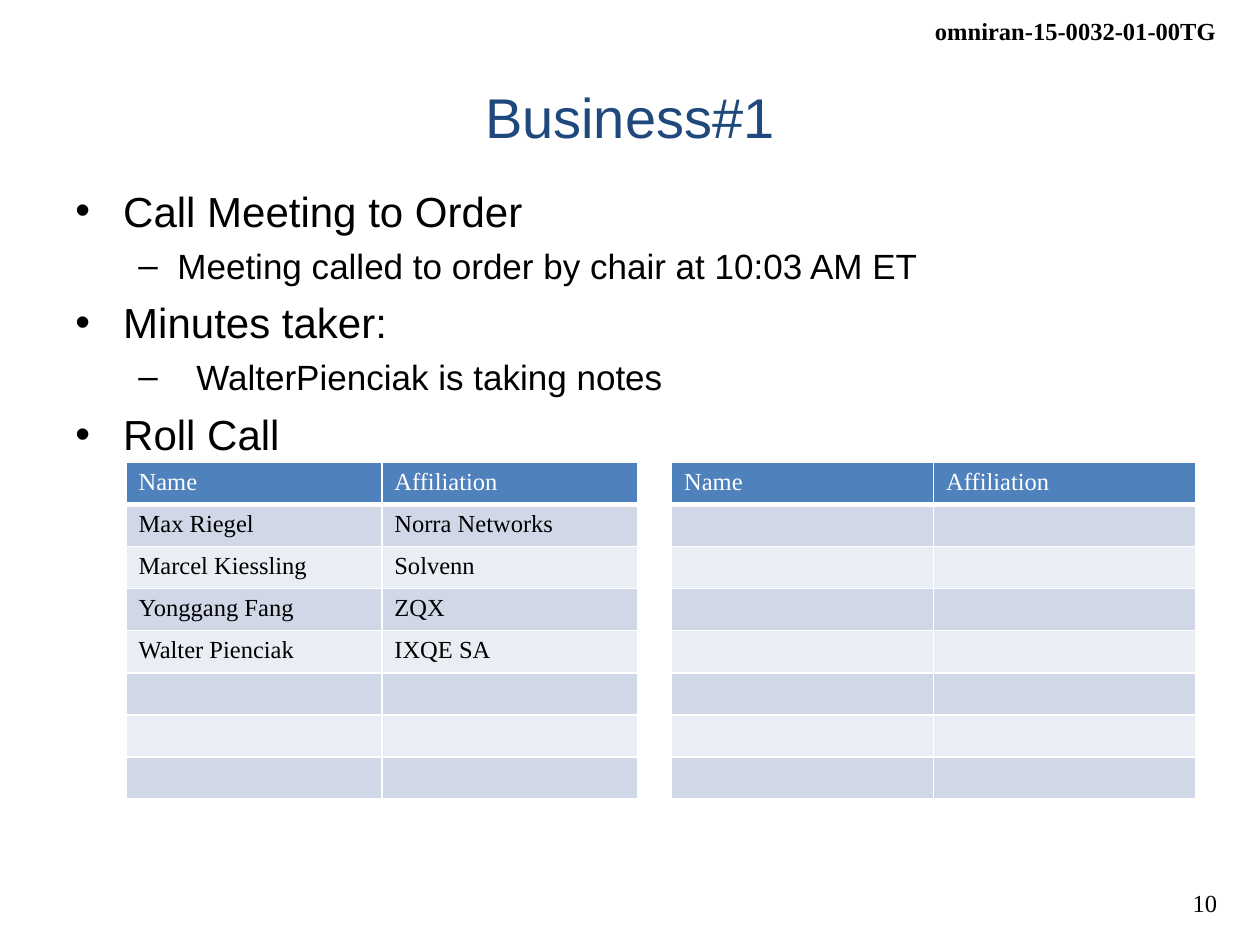
from dataclasses import dataclass

import pptx
import pptx.dml.color
import pptx.enum.text
import pptx.oxml.ns
import pptx.util
from lxml import etree

Inches = pptx.util.Inches
Pt = pptx.util.Pt
RGBColor = pptx.dml.color.RGBColor
PP_ALIGN = pptx.enum.text.PP_ALIGN
MSO_ANCHOR = pptx.enum.text.MSO_ANCHOR
qn = pptx.oxml.ns.qn

BLACK = RGBColor(0x00, 0x00, 0x00)
WHITE = RGBColor(0xFF, 0xFF, 0xFF)
NAVY = RGBColor(0x1F, 0x49, 0x7D)
HEADER = RGBColor(0x4F, 0x81, 0xBD)
BANDS = (RGBColor(0xE9, 0xED, 0xF4), RGBColor(0xD0, 0xD8, 0xE8))
SANS = "Arial"
SERIF = "Times New Roman"


@dataclass
class Style:
    size: float
    font: str
    color: RGBColor = BLACK
    bold: bool = False


@dataclass
class Label:
    text: str
    box: tuple[float, float, float, float]
    style: Style
    align: PP_ALIGN
    anchor: MSO_ANCHOR = MSO_ANCHOR.TOP
    wrap: bool = False


@dataclass
class Level:
    bullet: str
    style: Style
    left: float
    hanging: float
    before: float


LABELS = [
    Label("omniran-15-0032-01-00TG", (7.3, 0.08, 2.45, 0.34),
          Style(14, SERIF, bold=True), PP_ALIGN.RIGHT),
    Label("10", (9.33, 7, 0.43, 0.34), Style(14, SERIF), PP_ALIGN.RIGHT),
    Label("Business#1", (0.5, 0.3, 9, 1.25), Style(32, SANS, NAVY),
          PP_ALIGN.CENTER, MSO_ANCHOR.MIDDLE, True),
]

TOPIC = Level("•", Style(24, SANS), 0.38, 0.38, 6)
DETAIL = Level("–", Style(20, SANS), 0.81, 0.31, 5)
NOTE = Level("–", Style(20, SANS), 0.96, 0.46, 5)
AGENDA = [
    (TOPIC, "Call Meeting to Order"),
    (DETAIL, "Meeting called to order by chair at 10:03 AM ET"),
    (TOPIC, "Minutes taker:"),
    (NOTE, "WalterPienciak is taking notes"),
    (TOPIC, "Roll Call"),
]

COLUMNS = (2.03, 2.03, 0.27, 2.08, 2.08)
GAP_COLUMN = 2
ROW_COUNT = 8
ROW_HEIGHT = 0.32
HEADINGS = ("Name", "Affiliation", "", "Name", "Affiliation")
ATTENDEES = [
    ("Max Riegel", "Norra Networks"),
    ("Marcel Kiessling", "Solvenn"),
    ("Yonggang Fang", "ZQX"),
    ("Walter Pienciak", "IXQE SA"),
]


def add_run(p, text: str, style: Style) -> None:
    r = p.add_run()
    r.text = text
    r.font.size = Pt(style.size)
    r.font.name = style.font
    r.font.bold = style.bold
    r.font.color.rgb = style.color


def add_label(s, label: Label) -> None:
    sp = s.shapes.add_textbox(*map(Inches, label.box))
    tf = sp.text_frame
    tf.word_wrap = label.wrap
    tf.vertical_anchor = label.anchor
    p = tf.paragraphs[0]
    p.alignment = label.align
    add_run(p, label.text, label.style)


def add_agenda(s) -> None:
    sp = s.shapes.add_textbox(Inches(0.5), Inches(1.42), Inches(9), Inches(2.83))
    tf = sp.text_frame
    tf.word_wrap = True
    for i, (level, text) in enumerate(AGENDA):
        p = tf.add_paragraph() if i else tf.paragraphs[0]
        p.level = 0 if level is TOPIC else 1
        p.space_before = Pt(level.before)
        pPr = p._p.get_or_add_pPr()
        pPr.set("marL", str(Inches(level.left)))
        pPr.set("indent", str(-Inches(level.hanging)))
        etree.SubElement(pPr, qn("a:buFont"), typeface=SANS)
        etree.SubElement(pPr, qn("a:buChar"), char=level.bullet)
        add_run(p, text, level.style)


def set_borders(cell, bottom: float) -> None:
    tcPr = cell._tc.get_or_add_tcPr()
    widths = {"a:lnL": 1, "a:lnR": 1, "a:lnT": 1, "a:lnB": bottom}
    for i, (tag, width) in enumerate(widths.items()):
        ln = etree.Element(qn(tag), w=str(Pt(width)))
        fill = etree.SubElement(ln, qn("a:solidFill"))
        etree.SubElement(fill, qn("a:srgbClr"), val=str(WHITE))
        tcPr.insert(i, ln)


def fill_cell(cell, text: str, row: int, col: int) -> None:
    cell.fill.solid()
    band = BANDS[row % 2] if row else HEADER
    cell.fill.fore_color.rgb = WHITE if col == GAP_COLUMN else band
    set_borders(cell, 1 if row else 3)
    p = cell.text_frame.paragraphs[0]
    if text:
        add_run(p, text, Style(14, SERIF, BLACK if row else WHITE))
    else:
        end = etree.SubElement(p._p, qn("a:endParaRPr"), sz="1400")
        etree.SubElement(end, qn("a:latin"), typeface=SERIF)


def add_roll_call(s) -> None:
    table = s.shapes.add_table(
        ROW_COUNT, len(COLUMNS), Inches(1), Inches(3.67),
        Inches(sum(COLUMNS)), Inches(ROW_COUNT * ROW_HEIGHT)).table
    for column, width in zip(table.columns, COLUMNS):
        column.width = Inches(width)
    rows = [HEADINGS, *ATTENDEES]
    for i, row in enumerate(table.rows):
        row.height = Inches(ROW_HEIGHT)
        texts = rows[i] if i < len(rows) else ()
        for j, cell in enumerate(row.cells):
            fill_cell(cell, texts[j] if j < len(texts) else "", i, j)


def main() -> None:
    prs = pptx.Presentation()
    prs.slide_width = Inches(10)
    prs.slide_height = Inches(7.5)
    s = prs.slides.add_slide(prs.slide_layouts[6])
    for label in LABELS:
        add_label(s, label)
    add_agenda(s)
    add_roll_call(s)
    prs.save("out.pptx")


if __name__ == "__main__":
    main()
